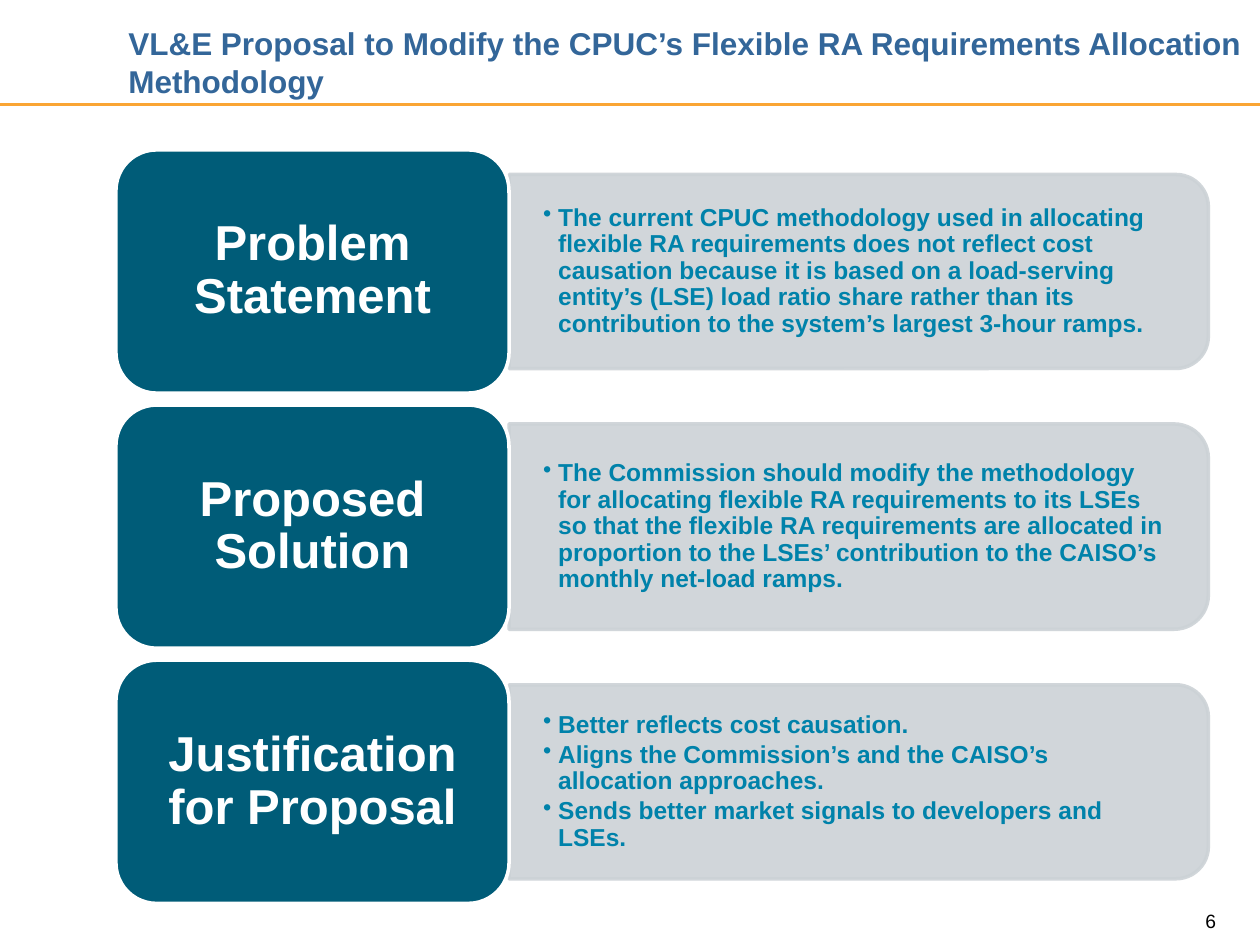
from lxml import etree
from pptx import Presentation
from pptx.dml.color import RGBColor
from pptx.enum.shapes import MSO_CONNECTOR, MSO_SHAPE
from pptx.enum.text import MSO_ANCHOR, PP_ALIGN
from pptx.oxml.ns import qn
from pptx.util import Inches, Pt

STRAIGHT = MSO_CONNECTOR.STRAIGHT
ROUNDED = MSO_SHAPE.ROUNDED_RECTANGLE
ROUNDED_TOP = MSO_SHAPE.ROUND_2_SAME_RECTANGLE
MIDDLE, BOTTOM = MSO_ANCHOR.MIDDLE, MSO_ANCHOR.BOTTOM
LEFT, CENTER, RIGHT = PP_ALIGN.LEFT, PP_ALIGN.CENTER, PP_ALIGN.RIGHT

ORANGE = RGBColor(0xFA, 0xA5, 0x34)
TITLE_BLUE = RGBColor(0x33, 0x66, 0x99)
TEAL = RGBColor(0x00, 0x5C, 0x78)
BODY_BLUE = RGBColor(0x00, 0x82, 0xAA)
GREY = RGBColor(0xCC, 0xD2, 0xD6)
WHITE = RGBColor(0xFF, 0xFF, 0xFF)
BLACK = RGBColor(0x00, 0x00, 0x00)

CARD_LEFT, CARD_TOP, CARD_WIDTH, CARD_HEIGHT = 0.92, 1.19, 3.12, 1.93
ROW_PITCH = 2.025
PANEL_LEFT, PANEL_WIDTH = CARD_LEFT + CARD_WIDTH, 5.55

ROWS = [
    ("Problem Statement", 1.54, [
        "The current CPUC methodology used in allocating flexible RA requirements "
        "does not reflect cost causation because it is based on a load-serving "
        "entity’s (LSE) load ratio share rather than its contribution to the "
        "system’s largest 3-hour ramps."]),
    ("Proposed Solution", 1.63, [
        "The Commission should modify the methodology for allocating flexible RA "
        "requirements to its LSEs so that the flexible RA requirements are "
        "allocated in proportion to the LSEs’ contribution to the CAISO’s monthly "
        "net-load ramps."]),
    ("Justification for Proposal", 1.54, [
        "Better reflects cost causation.",
        "Aligns the Commission’s and the CAISO’s allocation approaches.",
        "Sends better market signals to developers and LSEs."]),
]


def write(shape, paragraphs, size, color, bold=True, align=LEFT, anchor=None, insets=(0.1, 0.05)):
    """Fill a shape with paragraphs; insets are horizontal and vertical inches."""
    frame = shape.text_frame
    frame.word_wrap = True
    frame.margin_left = frame.margin_right = Inches(insets[0])
    frame.margin_top = frame.margin_bottom = Inches(insets[1])
    if anchor is not None:
        frame.vertical_anchor = anchor
    frame.text = "\n".join(paragraphs)
    for paragraph in frame.paragraphs:
        paragraph.alignment = align
        for run in paragraph.runs:
            run.font.name = "Arial"
            run.font.size = Pt(size)
            run.font.bold = bold
            run.font.color.rgb = color


def paint(shape, fill, line, alpha=None):
    """Set fill and outline; alpha is the opacity in percent."""
    shape.shadow.inherit = False
    shape.fill.solid()
    shape.fill.fore_color.rgb = fill
    shape.line.color.rgb = line
    shape.line.width = Pt(2)
    if alpha is not None:
        for color in shape._element.spPr.iter(qn("a:srgbClr")):
            etree.SubElement(color, qn("a:alpha"), val=str(alpha * 1000))


prs = Presentation()
prs.slide_width, prs.slide_height = Inches(10), Inches(7.5)
slide = prs.slides.add_slide(prs.slide_layouts[6])
shapes = slide.shapes

title_rule = shapes.add_connector(STRAIGHT, 0, Inches(0.83), prs.slide_width, Inches(0.83))
title_rule.line.color.rgb = ORANGE
title_rule.line.width = Pt(2)
etree.SubElement(title_rule._element.spPr, qn("a:effectLst"))

page_number = shapes.add_textbox(Inches(8.87), Inches(7.17), Inches(0.88), Inches(0.29))
write(page_number, ["6"], 11, BLACK, bold=False, align=RIGHT)

title = shapes.add_textbox(Inches(0.92), Inches(0.17), Inches(9.08), Inches(0.67))
write(title, ["VL&E Proposal to Modify the CPUC’s Flexible RA Requirements Allocation Methodology"],
      18, TITLE_BLUE, anchor=BOTTOM)

for row, (heading, panel_height, points) in enumerate(ROWS):
    top = CARD_TOP + row * ROW_PITCH
    middle = top + CARD_HEIGHT / 2

    # The panel stands upright before its quarter turn, so its sides are swapped.
    panel = shapes.add_shape(
        ROUNDED_TOP,
        Inches(PANEL_LEFT + (PANEL_WIDTH - panel_height) / 2), Inches(middle - PANEL_WIDTH / 2),
        Inches(panel_height), Inches(PANEL_WIDTH))
    panel.rotation = 90
    paint(panel, GREY, GREY, alpha=90)

    body_height = panel_height - 0.15
    body = shapes.add_textbox(Inches(PANEL_LEFT), Inches(middle - body_height / 2),
                              Inches(5.47), Inches(body_height))
    write(body, points, 14, BODY_BLUE, anchor=MIDDLE, insets=(0.27, 0.14))
    for paragraph in body.text_frame.paragraphs:
        paragraph.line_spacing = 0.9
        paragraph.space_after = Pt(2.1)
        properties = paragraph._p.get_or_add_pPr()
        properties.set("marL", str(Inches(0.12)))
        properties.set("indent", str(-Inches(0.12)))
        etree.SubElement(properties, qn("a:buChar"), char="•")

    card = shapes.add_shape(ROUNDED, Inches(CARD_LEFT), Inches(top),
                            Inches(CARD_WIDTH), Inches(CARD_HEIGHT))
    paint(card, TEAL, WHITE)
    write(card, [heading], 28, WHITE, align=CENTER, anchor=MIDDLE, insets=(0.12, 0.06))
    card.text_frame.paragraphs[0].line_spacing = 0.9

prs.save("out.pptx")
